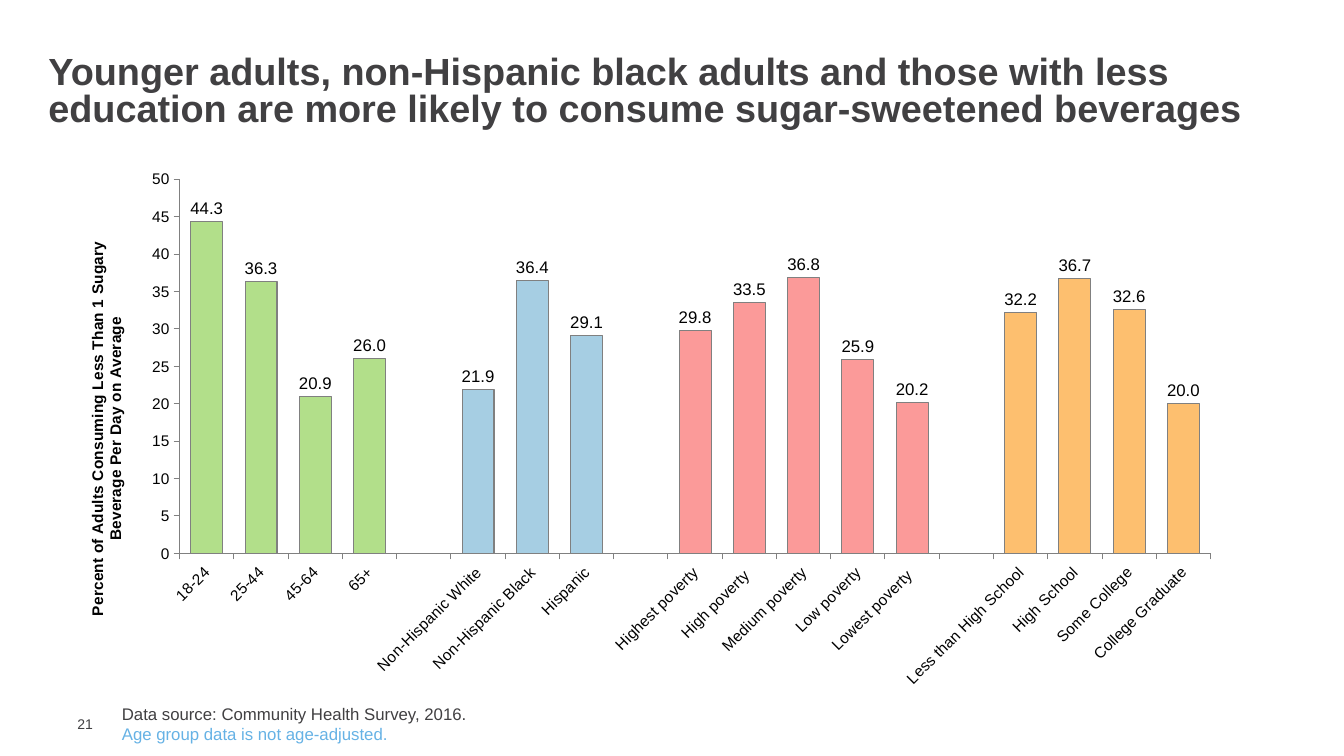
import dataclasses

import lxml.etree
import pptx
import pptx.chart.data
import pptx.dml.color
import pptx.enum.chart
import pptx.enum.text
import pptx.oxml
import pptx.oxml.ns
import pptx.util

Inches = pptx.util.Inches
Pt = pptx.util.Pt


@dataclasses.dataclass(frozen=True)
class Theme:
    font: str = "Arial"
    text: str = "414042"
    chart_text: str = "000000"
    note: str = "66B2E5"
    line: str = "808080"
    age: str = "B2DF8A"
    ethnicity: str = "A6CEE3"
    poverty: str = "FB9A99"
    education: str = "FDBF6F"
    title_size: float = 27
    body_size: float = 12
    axis_size: float = 11
    number_size: float = 10
    line_width: float = 0.75


THEME = Theme()

GROUPS = [
    (THEME.age, [("18-24", 44.3), ("25-44", 36.3), ("45-64", 20.9), ("65+", 26.0)]),
    (THEME.ethnicity, [("Non-Hispanic White", 21.9), ("Non-Hispanic Black", 36.4),
                       ("Hispanic", 29.1)]),
    (THEME.poverty, [("Highest poverty", 29.8), ("High poverty ", 33.5),
                     ("Medium poverty", 36.8), ("Low poverty", 25.9),
                     ("Lowest poverty ", 20.2)]),
    (THEME.education, [("Less than High School", 32.2), ("High School", 36.7),
                       ("Some College", 32.6), ("College Graduate", 20.0)]),
]


def color(value):
    return pptx.dml.color.RGBColor.from_string(value)


def style_font(font, size, value, bold=False):
    font.name = THEME.font
    font.size = Pt(size)
    font.bold = bold
    font.color.rgb = color(value)


def style_line(line):
    line.color.rgb = color(THEME.line)
    line.width = Pt(THEME.line_width)


def place(shape, box):
    shape.left, shape.top, shape.width, shape.height = map(Inches, box)


def add_title(slide, box, text):
    title = slide.shapes.title
    place(title, box)
    frame = title.text_frame
    frame.text = text
    frame.word_wrap = True
    frame.auto_size = pptx.enum.text.MSO_AUTO_SIZE.NONE
    frame.vertical_anchor = pptx.enum.text.MSO_ANCHOR.MIDDLE
    paragraph = frame.paragraphs[0]
    paragraph.alignment = pptx.enum.text.PP_ALIGN.LEFT
    paragraph.line_spacing = 0.8
    style_font(paragraph.font, THEME.title_size, THEME.text, bold=True)


def add_text(slide, box, lines, size):
    frame = slide.shapes.add_textbox(*map(Inches, box)).text_frame
    frame.word_wrap = True
    for index, (text, value) in enumerate(lines):
        paragraph = frame.add_paragraph() if index else frame.paragraphs[0]
        paragraph.text = text
        style_font(paragraph.font, size, value)
    return frame


def add_page_number(slide, box, text):
    frame = add_text(slide, box, [(text, THEME.text)], THEME.number_size)
    frame.margin_top = frame.margin_right = frame.margin_bottom = 0
    frame.vertical_anchor = pptx.enum.text.MSO_ANCHOR.MIDDLE


def set_plot_area(chart, x, y, width, height):
    plot_area = chart._chartSpace.chart.plotArea
    for layout in plot_area.findall(pptx.oxml.ns.qn("c:layout")):
        plot_area.remove(layout)
    layout = lxml.etree.Element(pptx.oxml.ns.qn("c:layout"))
    manual = lxml.etree.SubElement(layout, pptx.oxml.ns.qn("c:manualLayout"))
    settings = [("layoutTarget", "inner"), ("xMode", "edge"), ("yMode", "edge"),
                ("x", x), ("y", y), ("w", width), ("h", height)]
    for tag, value in settings:
        lxml.etree.SubElement(manual, pptx.oxml.ns.qn(f"c:{tag}"), val=str(value))
    plot_area.insert(0, layout)


def style_axis(axis):
    axis.has_major_gridlines = False
    axis.major_tick_mark = pptx.enum.chart.XL_TICK_MARK.OUTSIDE
    axis.minor_tick_mark = pptx.enum.chart.XL_TICK_MARK.NONE
    style_font(axis.tick_labels.font, THEME.axis_size, THEME.chart_text)
    style_line(axis.format.line)


def add_beverage_chart(slide, box, axis_title):
    bars = []
    for fill, group in GROUPS:
        if bars:
            bars.append(("", None, None))
        bars.extend((label, value, fill) for label, value in group)

    data = pptx.chart.data.CategoryChartData(number_format="#,##0.0")
    data.categories = [label for label, _, _ in bars]
    data.add_series("Series 1", [value for _, value, _ in bars])
    chart = slide.shapes.add_chart(
        pptx.enum.chart.XL_CHART_TYPE.COLUMN_CLUSTERED, *map(Inches, box), data).chart
    chart.has_legend = False
    chart.has_title = False
    style_font(chart.font, THEME.number_size, THEME.text)
    set_plot_area(chart, 0.096, 0.037, 0.883, 0.694)

    style_axis(chart.category_axis)
    body = chart.category_axis._element.txPr.find(pptx.oxml.ns.qn("a:bodyPr"))
    body.set("rot", str(-45 * 60000))
    body.set("vert", "horz")

    axis = chart.value_axis
    style_axis(axis)
    axis.minimum_scale, axis.maximum_scale, axis.major_unit = 0, 50, 5
    axis.tick_labels.number_format = "0"
    axis.tick_labels.number_format_is_linked = False
    axis.axis_title.text_frame.text = axis_title
    style_font(axis.axis_title.text_frame.paragraphs[0].font,
               THEME.axis_size, THEME.chart_text, bold=True)

    plot = chart.plots[0]
    plot.vary_by_categories = False
    plot.gap_width = 70
    plot.overlap = -27
    series = plot.series[0]
    series.format.fill.solid()
    series.format.fill.fore_color.rgb = color(THEME.age)
    style_line(series.format.line)
    for index, (_, _, fill) in enumerate(bars):
        if fill and fill != THEME.age:
            point = series.points[index].format
            point.fill.solid()
            point.fill.fore_color.rgb = color(fill)
            style_line(point.line)

    labels = series.data_labels
    labels.show_value = True
    labels.number_format = "#,##0.0"
    labels.number_format_is_linked = False
    labels.position = pptx.enum.chart.XL_LABEL_POSITION.OUTSIDE_END
    style_font(labels.font, THEME.body_size, THEME.chart_text)


def main():
    presentation = pptx.Presentation()
    presentation.slide_width = Inches(13.33)
    presentation.slide_height = Inches(7.5)
    slide = presentation.slides.add_slide(presentation.slide_layouts[5])
    add_page_number(slide, (0.67, 7.1, 0.43, 0.17), "21")
    add_title(slide, (0.38, 0.51, 12.49, 0.83),
              "Younger adults, non-Hispanic black adults and those with less "
              "education are more likely to consume sugar-sweetened beverages")
    add_beverage_chart(slide, (0.67, 1.58, 11.58, 5.35),
                       "Percent of Adults Consuming Less Than 1 Sugary "
                       "Beverage Per Day on Average")
    add_text(slide, (1.11, 6.93, 9.71, 0.5),
             [("Data source: Community Health Survey, 2016.", THEME.text),
              ("Age group data is not age-adjusted.", THEME.note)], THEME.body_size)
    presentation.save("out.pptx")


if __name__ == "__main__":
    main()
